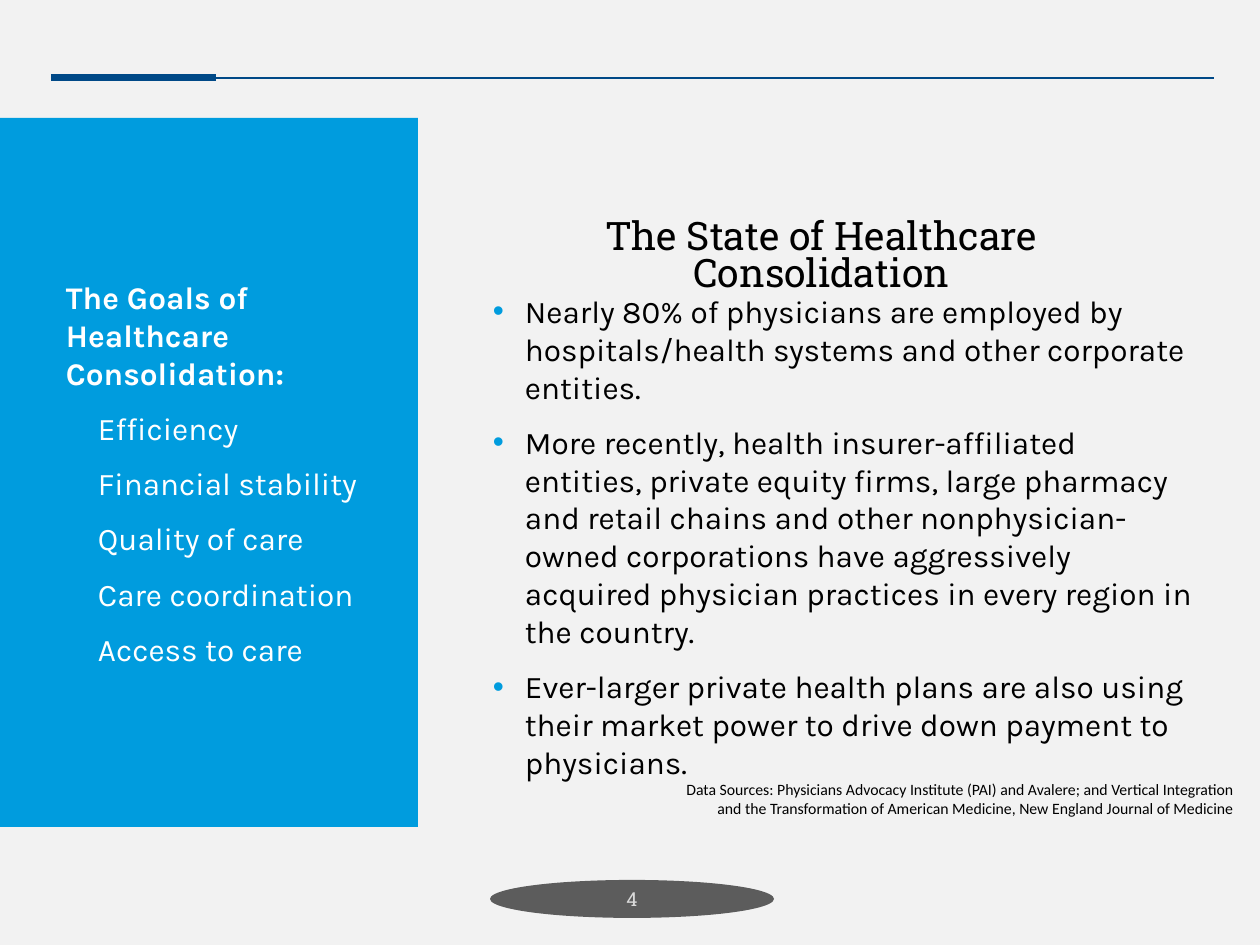
"""Build the slide on the state of healthcare consolidation."""
from pptx import Presentation
from pptx.dml.color import RGBColor
from pptx.enum.shapes import MSO_CONNECTOR, MSO_SHAPE
from pptx.enum.text import MSO_ANCHOR, MSO_AUTO_SIZE, PP_ALIGN
from pptx.oxml.ns import qn
from pptx.util import Emu, Pt
from lxml.etree import SubElement

SCALE = 914400 // 126
SLIDE_SIZE = (1260, 945)
INK, WHITE, NAVY, BLUE, PAPER = "000000", "FFFFFF", "004987", "009CDE", "F2F2F2"
BADGE, BADGE_TEXT = "1D1D1D", "D9D9D9"
HEADING_FONT, BODY_FONT, NOTE_FONT = "Roboto Slab", "Karla", "Calibri"

TITLE = "The State of Healthcare Consolidation"
FINDINGS = [
    "Nearly 80% of physicians are employed by hospitals/health systems and other "
    "corporate entities.",
    "More recently, health insurer-affiliated entities, private equity firms, large "
    "pharmacy and retail chains and other nonphysician-owned corporations have "
    "aggressively acquired physician practices in every region in the country.",
    "Ever-larger private health plans are also using their market power to drive "
    "down payment to physicians.",
]
GOALS_HEADING = "The Goals of Healthcare Consolidation:"
GOALS = ["Efficiency", "Financial stability", "Quality of care",
         "Care coordination", "Access to care"]
SOURCES = ("Data Sources: Physicians Advocacy Institute (PAI) and Avalere; and Vertical "
           "Integration and the Transformation of American Medicine, New England "
           "Journal of Medicine")
PAGE_NUMBER = "4"

RULE_Y = 78
RULES = [(51, 1214, 1), (51, 216, 4)]
PANEL_BOX = (0, 118, 418, 709)
TITLE_BOX = (466, 214, 711, 54)
FINDINGS_BOX = (480, 286, 733, 373)
GOALS_BOX = (57, 273, 363, 504)
SOURCES_BOX = (665, 774, 581, 70)
BADGE_BOX = (490, 880, 284, 38)
BULLET_INDENT = 32


def px(length):
    return Emu(length * SCALE)


def color(value):
    return RGBColor.from_string(value)


def add_rule(slide, left, right, weight):
    rule = slide.shapes.add_connector(
        MSO_CONNECTOR.STRAIGHT, px(left), px(RULE_Y), px(right), px(RULE_Y))
    rule.line.color.rgb = color(NAVY)
    rule.line.width = Pt(weight)
    SubElement(rule._element.spPr, qn("a:effectLst"))


def add_block(slide, preset, box, fill):
    block = slide.shapes.add_shape(preset, *map(px, box))
    block.shadow.inherit = False
    block.fill.solid()
    block.fill.fore_color.rgb = color(fill)
    block.line.fill.background()
    return block


def add_text_box(slide, box, insets=(13, 6)):
    frame = slide.shapes.add_textbox(*map(px, box)).text_frame
    set_frame(frame, insets)
    return frame


def set_frame(frame, insets, anchor=MSO_ANCHOR.TOP):
    frame.word_wrap = True
    frame.auto_size = MSO_AUTO_SIZE.NONE
    frame.vertical_anchor = anchor
    frame.margin_left = frame.margin_right = px(insets[0])
    frame.margin_top = frame.margin_bottom = px(insets[1])


def style(paragraph, font, size, ink, bold=False, align=PP_ALIGN.LEFT):
    paragraph.alignment = align
    for run in paragraph.runs:
        run.font.name = font
        run.font.size = Pt(size)
        run.font.bold = bold
        run.font.color.rgb = color(ink)


def add_bullet(paragraph):
    properties = paragraph._p.get_or_add_pPr()
    properties.set("marL", str(px(BULLET_INDENT)))
    properties.set("indent", str(-px(BULLET_INDENT)))
    bullet_color = SubElement(properties, qn("a:buClr"))
    SubElement(bullet_color, qn("a:srgbClr"), val=BLUE)
    SubElement(properties, qn("a:buFont"), typeface="Arial")
    SubElement(properties, qn("a:buChar"), char="•")


def fill_list(frame, items, ink, heading=None):
    lines = ([heading] if heading else []) + items
    frame.text = "\n".join(lines)
    for index, paragraph in enumerate(frame.paragraphs):
        is_heading = heading is not None and index == 0
        if not is_heading:
            add_bullet(paragraph)
        if index:
            paragraph.space_before = Pt(10)
        style(paragraph, BODY_FONT, 18, ink, bold=is_heading)


def main():
    deck = Presentation()
    deck.slide_width, deck.slide_height = map(px, SLIDE_SIZE)
    slide = deck.slides.add_slide(deck.slide_layouts[5])
    slide.background.fill.solid()
    slide.background.fill.fore_color.rgb = color(PAPER)

    for rule in RULES:
        add_rule(slide, *rule)
    add_block(slide, MSO_SHAPE.RECTANGLE, PANEL_BOX, BLUE)

    title = slide.shapes.title
    title.left, title.top, title.width, title.height = map(px, TITLE_BOX)
    title.text_frame.text = TITLE
    set_frame(title.text_frame, (13, 6))
    heading = title.text_frame.paragraphs[0]
    heading.line_spacing = 0.8
    style(heading, HEADING_FONT, 22.4, INK, align=PP_ALIGN.CENTER)

    fill_list(add_text_box(slide, FINDINGS_BOX), FINDINGS, INK)

    badge = add_block(slide, MSO_SHAPE.OVAL, BADGE_BOX, BADGE)
    badge_color = badge._element.spPr.find(qn("a:solidFill"))[0]
    SubElement(badge_color, qn("a:alpha"), val="70000")
    badge.text_frame.text = PAGE_NUMBER
    set_frame(badge.text_frame, (3, 6), MSO_ANCHOR.MIDDLE)
    style(badge.text_frame.paragraphs[0], HEADING_FONT, 11, BADGE_TEXT,
          align=PP_ALIGN.CENTER)

    fill_list(add_text_box(slide, GOALS_BOX, (9, 5)), GOALS, WHITE, GOALS_HEADING)

    sources = add_text_box(slide, SOURCES_BOX)
    sources.text = SOURCES
    style(sources.paragraphs[0], NOTE_FONT, 9, INK, align=PP_ALIGN.RIGHT)

    deck.save("out.pptx")


if __name__ == "__main__":
    main()
